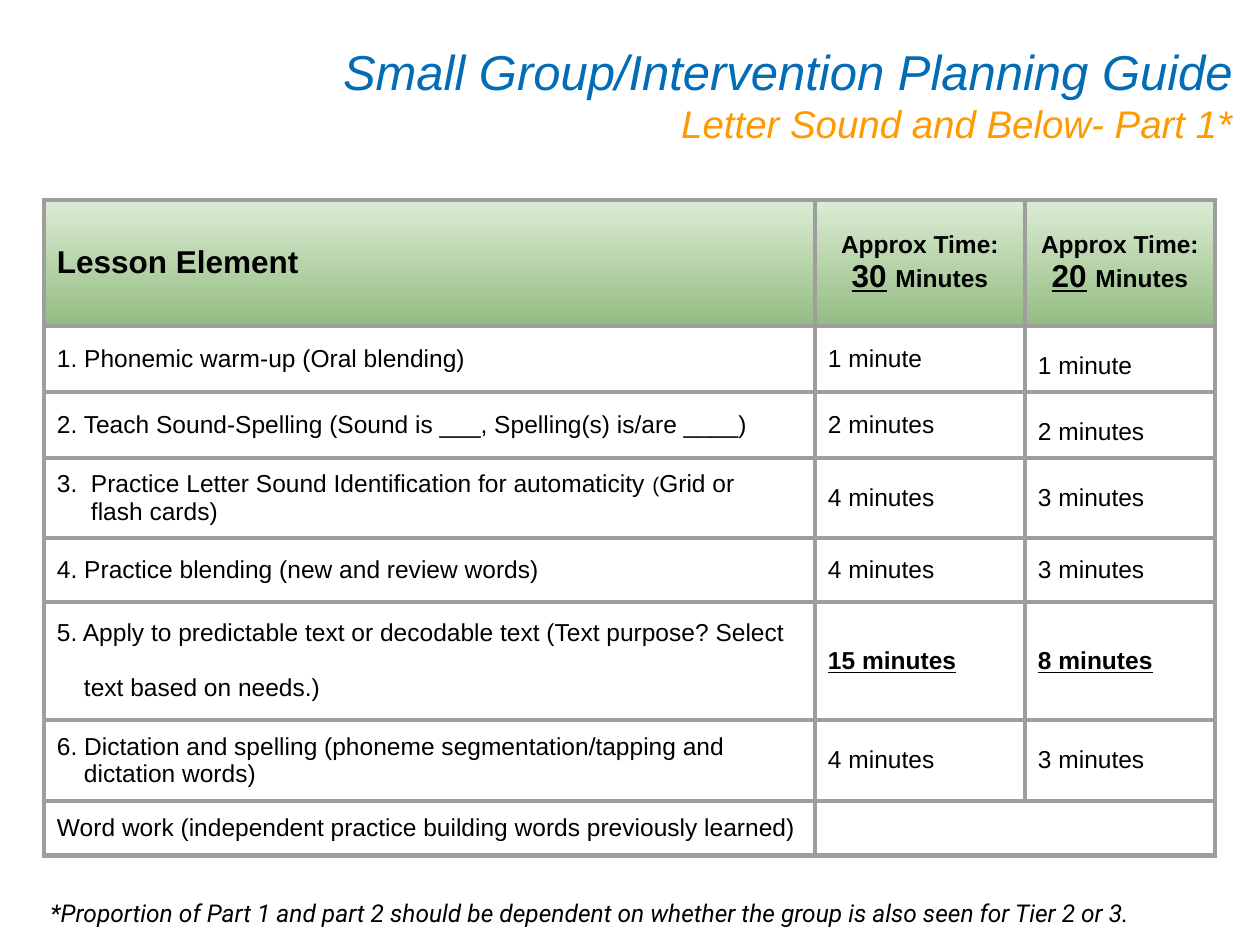
from dataclasses import dataclass

from lxml.etree import SubElement
from pptx import Presentation
from pptx.dml.color import RGBColor
from pptx.enum.text import MSO_ANCHOR, MSO_AUTO_SIZE, PP_ALIGN
from pptx.oxml.ns import qn
from pptx.util import Pt

PX = 914400 / 126


@dataclass(frozen=True)
class Theme:
    font: str = "Arial"
    note_font: str = "Roboto"
    ink: str = "000000"
    title: str = "026CB6"
    subtitle: str = "FF9900"
    paper: str = "FFFFFF"
    border: str = "9E9E9E"
    header_top: str = "DCECD5"
    header_bottom: str = "93BC81"
    title_size: int = 28
    subtitle_size: int = 22
    heading_size: int = 18
    body_size: int = 14
    small_size: int = 12
    border_width: int = 3


THEME = Theme()


def px(*lengths):
    """Turn px lengths into EMU, as one value or as a list."""
    emu = [round(length * PX) for length in lengths]
    return emu if len(emu) > 1 else emu[0]


def style(run, size=THEME.body_size, color=THEME.ink, name=THEME.font,
          bold=False, italic=False, underline=False):
    font = run.font
    font.name, font.size = name, Pt(size)
    font.bold, font.italic, font.underline = bold, italic, underline
    font.color.rgb = RGBColor.from_string(color)


prs = Presentation()
prs.slide_width, prs.slide_height = px(1260, 945)
slide = prs.slides.add_slide(prs.slide_layouts[5])

# Title
title = slide.shapes.title
title.left, title.top, title.width, title.height = px(294, 14, 951, 160)
title.text_frame.text = "Small Group/Intervention Planning Guide\vLetter Sound and Below- Part 1*"
title.text_frame.auto_size = MSO_AUTO_SIZE.NONE
title.text_frame.vertical_anchor = MSO_ANCHOR.MIDDLE
heading = title.text_frame.paragraphs[0]
heading.alignment = PP_ALIGN.RIGHT
main_title, subtitle = heading.runs
style(main_title, THEME.title_size, THEME.title, italic=True)
style(subtitle, THEME.subtitle_size, THEME.subtitle, italic=True)

# Lesson plan: element lines, then the time in each plan
lessons = [
    (["1. Phonemic warm-up (Oral blending)"], "1 minute", "1 minute"),
    (["2. Teach Sound-Spelling (Sound is ___, Spelling(s) is/are ____)"],
     "2 minutes", "2 minutes"),
    (["3.\tPractice Letter Sound Identification for automaticity ", "flash cards)"],
     "4 minutes", "3 minutes"),
    (["4. Practice blending (new and review words)"], "4 minutes", "3 minutes"),
    (["5. Apply to predictable text or decodable text (Text purpose? Select",
      "text based on needs.)"], "15 minutes", "8 minutes"),
    (["6. Dictation and spelling (phoneme segmentation/tapping and", "dictation words)"],
     "4 minutes", "3 minutes"),
    (["Word work (independent practice building words previously learned)"], "", ""),
]
column_widths = [771, 210, 190]
row_heights = [126, 66, 66, 80, 64, 118, 81, 55]

table = slide.shapes.add_table(
    len(row_heights), len(column_widths),
    *px(44, 200, sum(column_widths), sum(row_heights))).table
table.first_row = table.horz_banding = False
for column, width in zip(table.columns, column_widths):
    column.width = px(width)
for row, height in zip(table.rows, row_heights):
    row.height = px(height)

for cell in table.iter_cells():
    cell.margin_left = cell.margin_right = px(13)
    cell.margin_top = cell.margin_bottom = px(12)
    cell.vertical_anchor = MSO_ANCHOR.MIDDLE
    properties = cell._tc.get_or_add_tcPr()
    for side in ("a:lnL", "a:lnR", "a:lnT", "a:lnB"):
        line = SubElement(properties, qn(side), w=str(Pt(THEME.border_width)))
        line_fill = SubElement(line, qn("a:solidFill"))
        SubElement(line_fill, qn("a:srgbClr"), val=THEME.border)
    cell.fill.solid()
    cell.fill.fore_color.rgb = RGBColor.from_string(THEME.paper)

# Header row
for column in range(len(column_widths)):
    fill = table.cell(0, column).fill
    fill.gradient()
    fill.gradient_angle = 270
    for stop, position, color in zip(fill.gradient_stops, (0, 1),
                                     (THEME.header_top, THEME.header_bottom)):
        stop.position = position
        stop.color.rgb = RGBColor.from_string(color)

element_header = table.cell(0, 0).text_frame
element_header.text = "Lesson Element"
style(element_header.paragraphs[0].runs[0], THEME.heading_size, bold=True)

for column, minutes in enumerate(("30", "20"), start=1):
    time_header = table.cell(0, column).text_frame
    time_header.text = f"Approx Time:\n{minutes}"
    caption, amount = time_header.paragraphs
    caption.alignment = amount.alignment = PP_ALIGN.CENTER
    style(caption.runs[0], bold=True)
    style(amount.runs[0], THEME.heading_size, bold=True, underline=True)
    for text, size in ((" ", THEME.heading_size), ("Minutes", THEME.body_size)):
        run = amount.add_run()
        run.text = text
        style(run, size, bold=True)

# Lesson rows
for row, (element_lines, *times) in enumerate(lessons, start=1):
    element = table.cell(row, 0).text_frame
    element.text = "\n".join(element_lines)
    for paragraph in element.paragraphs:
        style(paragraph.runs[0])
    for continuation in element.paragraphs[1:]:
        continuation._p.get_or_add_pPr().set("marL", str(px(27)))
    for column, time in enumerate(times, start=1):
        if time:
            cell = table.cell(row, column)
            cell.text_frame.text = time
            main_activity = row == 5
            style(cell.text_frame.paragraphs[0].runs[0],
                  bold=main_activity, underline=main_activity)

identification = table.cell(3, 0).text_frame.paragraphs
for text, size in (("(", THEME.small_size), ("Grid or", THEME.body_size)):
    run = identification[0].add_run()
    run.text = text
    style(run, size)
for paragraph in identification:
    paragraph._p.get_or_add_pPr().set("marL", str(px(34)))
identification[0]._p.get_or_add_pPr().set("indent", str(px(-34)))

table.cell(5, 0).text_frame.paragraphs[1].line_spacing = 2.0
for row in (1, 2):
    table.cell(row, 2).vertical_anchor = MSO_ANCHOR.BOTTOM

for column in (1, 2):
    blank = table.cell(7, column)
    blank.margin_top = blank.margin_bottom = 0
table.cell(7, 1).merge(table.cell(7, 2))

# Footnote
footnote = slide.shapes.add_textbox(*px(38, 892, 1193, 43)).text_frame
footnote.word_wrap = True
footnote.text = ("*Proportion of Part 1 and part 2 should be dependent on whether "
                 "the group is also seen for Tier 2 or 3.")
style(footnote.paragraphs[0].runs[0], name=THEME.note_font, italic=True)

prs.save("out.pptx")
